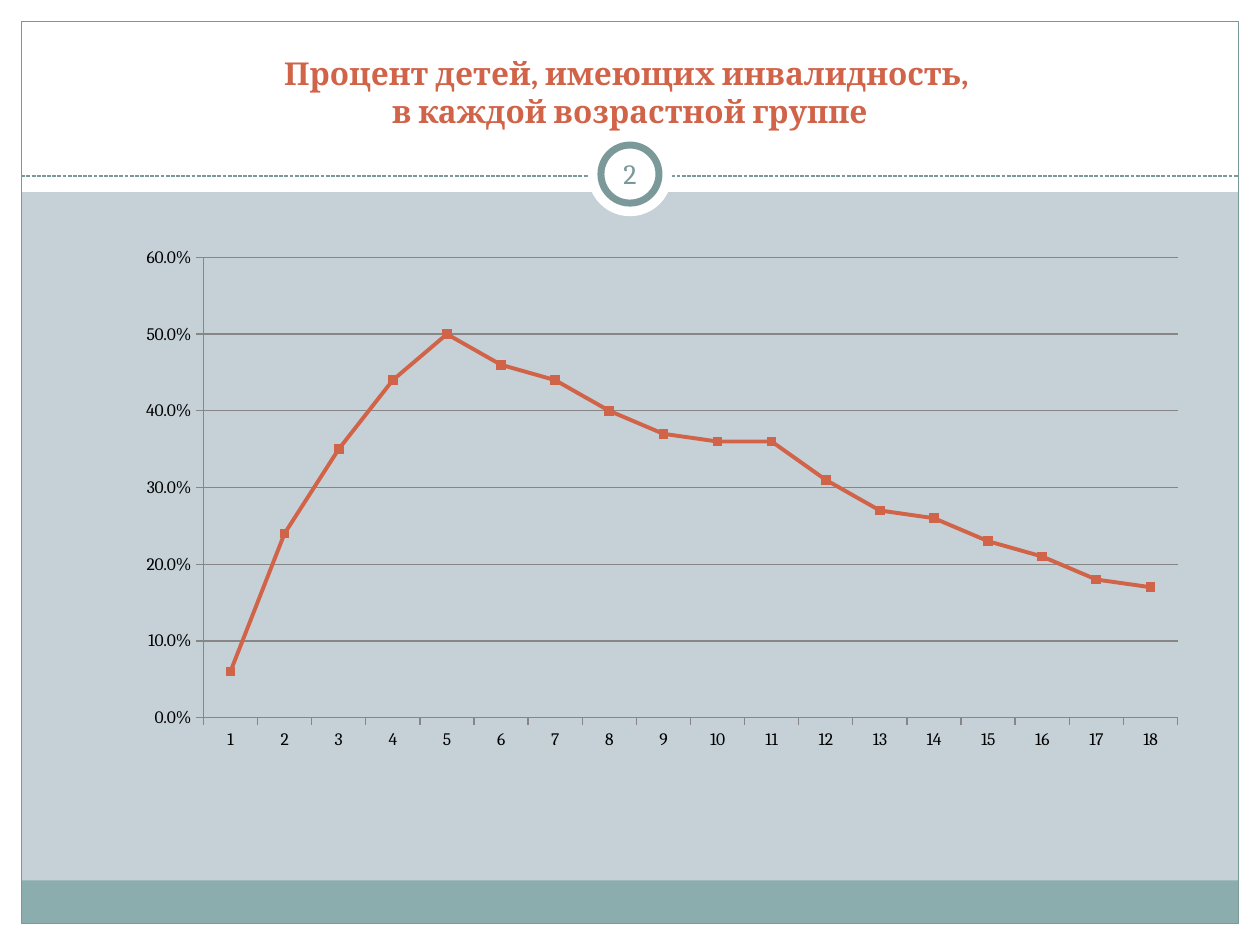
from collections import namedtuple
from dataclasses import dataclass

from lxml import etree
from pptx import Presentation
from pptx.chart.data import CategoryChartData
from pptx.dml.color import RGBColor
from pptx.enum.chart import XL_CHART_TYPE as ChartType, XL_MARKER_STYLE as Marker, XL_TICK_MARK as Tick
from pptx.enum.dml import MSO_LINE_DASH_STYLE as Dash
from pptx.enum.shapes import MSO_CONNECTOR_TYPE as Connector, MSO_SHAPE as Shape
from pptx.enum.text import MSO_ANCHOR as Anchor, PP_ALIGN as Align
from pptx.oxml import parse_xml
from pptx.oxml.ns import nsdecls, qn
from pptx.util import Cm, Pt

Box = namedtuple("Box", "left top width height")


@dataclass(frozen=True)
class Theme:
    font: str = "Cambria"
    paper: RGBColor = RGBColor.from_string("FFFFFF")
    ground: RGBColor = RGBColor.from_string("C5D1D7")
    band: RGBColor = RGBColor.from_string("8CADAE")
    rule: RGBColor = RGBColor.from_string("7C999A")
    accent: RGBColor = RGBColor.from_string("D16349")
    ink: RGBColor = RGBColor.from_string("000000")
    grid: RGBColor = RGBColor.from_string("868686")
    title_size: Pt = Pt(18)
    number_size: Pt = Pt(16)
    label_size: Pt = Pt(10)
    thin: Pt = Pt(0.75)


THEME = Theme()
WIDTH, HEIGHT, MARGIN = 25.4, 19.05, 0.43
SHARES = [0.06, 0.24, 0.35, 0.44, 0.5, 0.46, 0.44, 0.4, 0.37,
          0.36, 0.36, 0.31, 0.27, 0.26, 0.23, 0.21, 0.18, 0.17]


def in_cm(box):
    return [Cm(length) for length in box]


def centred(x, y, size):
    return Box(x - size / 2, y - size / 2, size, size)


def add_plain(slide, kind, box, fill=None, line=None, weight=THEME.thin):
    """Add a preset shape; a missing fill or line is left invisible."""
    shape = slide.shapes.add_shape(kind, *in_cm(box))
    shape.shadow.inherit = False
    if fill is None:
        shape.fill.background()
    else:
        shape.fill.solid()
        shape.fill.fore_color.rgb = fill
    if line is None:
        shape.line.fill.background()
    else:
        shape.line.color.rgb = line
        shape.line.width = weight


def add_text(slide, box, text, size, color, anchor, bold=False):
    frame = slide.shapes.add_textbox(*in_cm(box)).text_frame
    frame.word_wrap = True
    frame.vertical_anchor = anchor
    frame.margin_top = frame.margin_bottom = Cm(0.13)
    para = frame.paragraphs[0]
    para.text = text
    para.alignment = Align.CENTER
    for span in para.runs:
        span.font.name, span.font.size, span.font.bold = THEME.font, size, bold
        span.font.color.rgb = color


def add_frame(slide, page):
    """White header and borders, the bottom band and the outline."""
    right, bottom = page.width - MARGIN, page.height - MARGIN
    inner = right - MARGIN
    for box in (
        Box(0, bottom, page.width, MARGIN),
        Box(0, 0, page.width, 3.87),
        Box(0, 0, MARGIN, page.height),
        Box(right, 0, MARGIN, page.height),
    ):
        add_plain(slide, Shape.RECTANGLE, box, THEME.paper)
    add_plain(slide, Shape.RECTANGLE, Box(MARGIN, bottom - 0.87, inner, 0.87), THEME.band)
    add_plain(slide, Shape.RECTANGLE, Box(MARGIN, MARGIN, inner, bottom - MARGIN), line=THEME.rule)


def add_header(slide, box, title, number):
    """Title over a dashed rule, which carries the page number in a ring."""
    rule_y = box.top + 3.12
    rule = slide.shapes.add_connector(
        Connector.STRAIGHT, Cm(box.left), Cm(rule_y), Cm(box.left + box.width), Cm(rule_y))
    rule.line.color.rgb = THEME.rule
    rule.line.width = THEME.thin
    rule.line.dash_style = Dash.SQUARE_DOT
    etree.SubElement(rule.element.spPr, qn("a:effectLst"))

    middle, ring_y = box.left + box.width / 2, rule_y - 0.04
    add_plain(slide, Shape.OVAL, centred(middle, ring_y, 1.7), THEME.paper)
    add_plain(slide, Shape.OVAL, centred(middle, ring_y, 1.17), THEME.paper, THEME.rule, Pt(4))
    add_text(slide, Box(box.left + 0.41, box.top + 0.21, box.width - 0.82, 2.11),
             title, THEME.title_size, THEME.accent, Anchor.BOTTOM, bold=True)
    add_text(slide, centred(middle, ring_y - 0.02, 1.24),
             number, THEME.number_size, THEME.rule, Anchor.MIDDLE)


def set_plot_area(chart, box, plot):
    """Fix the inner plot area, given relative to the chart's box."""
    layout = parse_xml(
        f'<c:layout {nsdecls("c")}><c:manualLayout><c:layoutTarget val="inner"/>'
        '<c:xMode val="edge"/><c:yMode val="edge"/>'
        f'<c:x val="{plot.left / box.width}"/><c:y val="{plot.top / box.height}"/>'
        f'<c:w val="{plot.width / box.width}"/><c:h val="{plot.height / box.height}"/>'
        '</c:manualLayout></c:layout>')
    plot_area = chart.element.chart.plotArea
    for old in plot_area.findall(qn("c:layout")):
        plot_area.remove(old)
    plot_area.insert(0, layout)


def add_age_chart(slide, box):
    data = CategoryChartData(number_format="0.0%")
    data.categories = [str(age) for age in range(1, len(SHARES) + 1)]
    data.add_series("Series 1", SHARES)
    chart = slide.shapes.add_chart(ChartType.LINE_MARKERS, *in_cm(box), data).chart
    chart.has_legend = chart.has_title = False
    chart.font.name, chart.font.size = THEME.font, THEME.label_size
    chart.font.color.rgb = THEME.ink
    set_plot_area(chart, box, Box(1.59, 0.41, 19.64, 9.28))

    values = chart.value_axis
    values.minimum_scale, values.maximum_scale, values.major_unit = 0, 0.6, 0.1
    values.tick_labels.number_format = "0.0%"
    values.tick_labels.number_format_is_linked = False
    values.has_major_gridlines = True
    for axis in (values, chart.category_axis):
        axis.major_tick_mark = Tick.OUTSIDE
        axis.minor_tick_mark = Tick.NONE
    for part in (values, chart.category_axis, values.major_gridlines):
        part.format.line.color.rgb = THEME.grid
        part.format.line.width = THEME.thin

    chart.plots[0].vary_by_categories = False
    series = chart.plots[0].series[0]
    series.smooth = False
    series.format.line.color.rgb = THEME.accent
    series.format.line.width = Pt(2.25)
    series.marker.style, series.marker.size = Marker.SQUARE, 5
    series.marker.format.fill.solid()
    series.marker.format.fill.fore_color.rgb = THEME.accent
    series.marker.format.line.color.rgb = THEME.accent


def main():
    deck = Presentation()
    deck.slide_width, deck.slide_height = Cm(WIDTH), Cm(HEIGHT)
    slide = deck.slides.add_slide(deck.slide_layouts[6])
    slide.background.fill.solid()
    slide.background.fill.fore_color.rgb = THEME.ground

    add_frame(slide, Box(0, 0, WIDTH, HEIGHT))
    add_header(slide, Box(MARGIN, MARGIN, WIDTH - 2 * MARGIN, 3.44),
               "Процент детей, имеющих инвалидность, \vв каждой возрастной группе", "2")
    add_age_chart(slide, Box(2.51, 4.78, 21.67, 10.54))
    deck.save("out.pptx")


if __name__ == "__main__":
    main()
